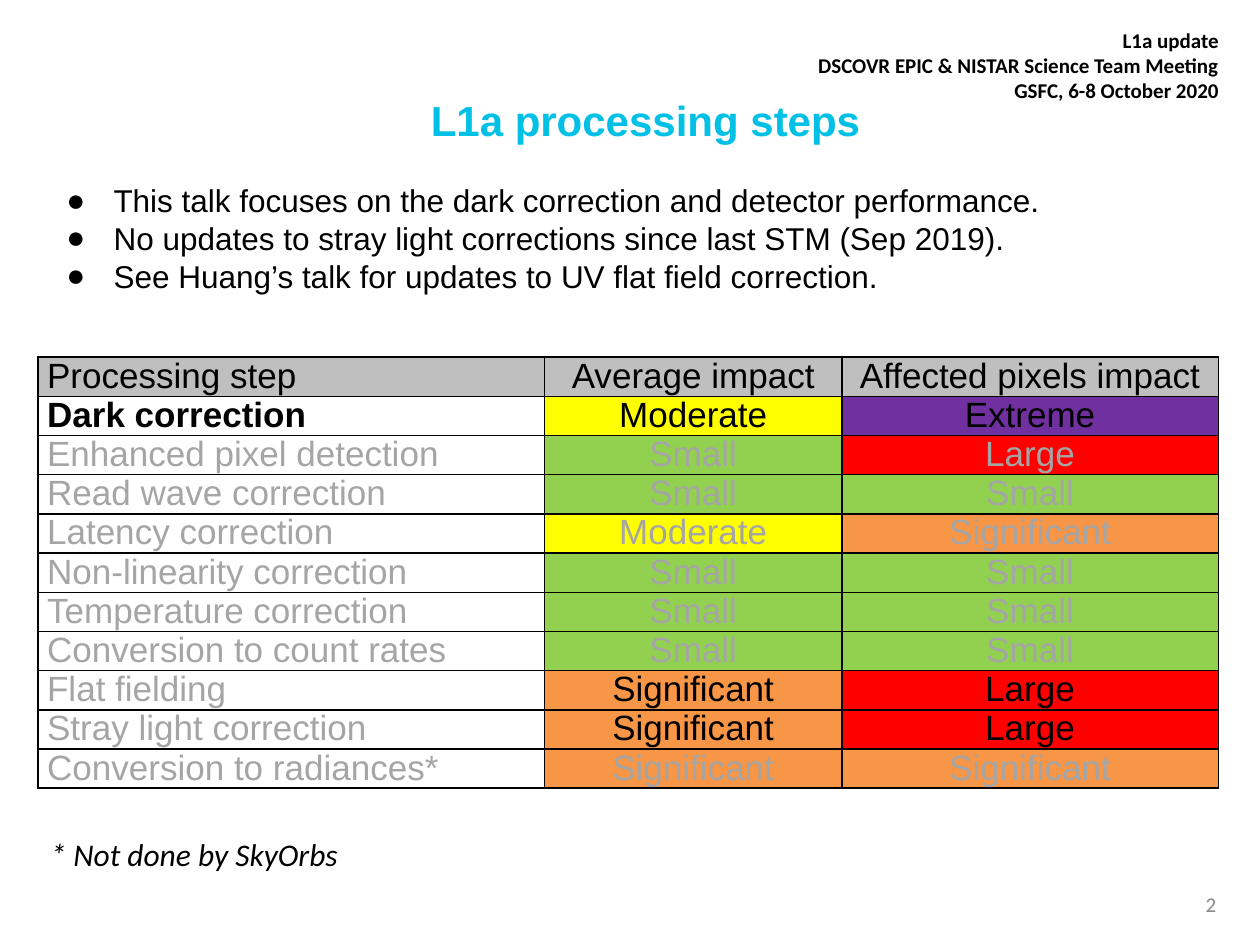
from lxml import etree
from pptx import Presentation
from pptx.dml.color import RGBColor
from pptx.enum import text as t
from pptx.oxml import ns
from pptx.util import Cm, Pt

BLACK = RGBColor(0x00, 0x00, 0x00)
CYAN = RGBColor(0x00, 0xC0, 0xE6)
DIM = RGBColor(0xA5, 0xA5, 0xA5)
GRAY = RGBColor(0x88, 0x88, 0x88)
SILVER = RGBColor(0xBF, 0xBF, 0xBF)
IMPACT = {
    "Small": RGBColor(0x92, 0xD0, 0x50),
    "Moderate": RGBColor(0xFF, 0xFF, 0x00),
    "Significant": RGBColor(0xF7, 0x96, 0x46),
    "Large": RGBColor(0xFF, 0x00, 0x00),
    "Extreme": RGBColor(0x70, 0x30, 0xA0),
}
LEFT, MID, RIGHT = t.PP_ALIGN.LEFT, t.PP_ALIGN.CENTER, t.PP_ALIGN.RIGHT


def style(para, size, color, name="Arial", bold=False, italic=False, align=LEFT):
    para.alignment = align
    font = para.font
    font.size, font.name, font.bold, font.italic = Pt(size), name, bold, italic
    font.color.rgb = color


def add_box(x, y, w, h, lines):
    frame = slide.shapes.add_textbox(Cm(x), Cm(y), Cm(w), Cm(h)).text_frame
    frame.word_wrap = True
    frame.text = "\n".join(lines)
    return frame


deck = Presentation()
deck.slide_width, deck.slide_height = Cm(25.4), Cm(19.05)
slide = deck.slides.add_slide(deck.slide_layouts[5])

# Header and page number
head = add_box(14.91, 0.43, 9.91, 1.8, [
    "L1a update",
    "DSCOVR EPIC & NISTAR Science Team Meeting",
    "GSFC, 6-8 October 2020",
])
for para in head.paragraphs:
    style(para, 12, BLACK, "Calibri", bold=True, align=RIGHT)

page = add_box(23.7, 17.72, 1.07, 1.02, ["2"])
page.vertical_anchor = t.MSO_ANCHOR.MIDDLE
style(page.paragraphs[0], 12, GRAY, "Calibri", align=RIGHT)

# Title
title = slide.shapes.title
title.left, title.top, title.width, title.height = Cm(8.43), Cm(1.78), Cm(9.6), Cm(1.27)
title.text_frame.text = "L1a processing steps"
title.text_frame.vertical_anchor = t.MSO_ANCHOR.TOP
style(title.text_frame.paragraphs[0], 24, CYAN, bold=True)

# Bullets
notes = add_box(0.77, 3.53, 24, 3.33, [
    "This talk focuses on the dark correction and detector performance.",
    "No updates to stray light corrections since last STM (Sep 2019).",
    "See Huang’s talk for updates to UV flat field correction.",
])
for para in notes.paragraphs:
    props = para._p.get_or_add_pPr()
    props.set("marL", str(Cm(1.27)))
    props.set("indent", str(-Cm(0.95)))
    etree.SubElement(props, ns.qn("a:buFont"), typeface="Arial")
    etree.SubElement(props, ns.qn("a:buChar"), char="●")
    style(para, 18, BLACK)

# Table of steps: label, average impact, affected pixels impact
rows = [
    ("Processing step", "Average impact", "Affected pixels impact"),
    ("Dark correction", "Moderate", "Extreme"),
    ("Enhanced pixel detection", "Small", "Large"),
    ("Read wave correction", "Small", "Small"),
    ("Latency correction", "Moderate", "Significant"),
    ("Non-linearity correction", "Small", "Small"),
    ("Temperature correction", "Small", "Small"),
    ("Conversion to count rates", "Small", "Small"),
    ("Flat fielding", "Significant", "Large"),
    ("Stray light correction", "Significant", "Large"),
    ("Conversion to radiances*", "Significant", "Significant"),
]
DARK = "Dark correction"
TALKS = ("Flat fielding", "Stray light correction")  # impacts stay black
widths = [10.21, 5.99, 7.59]
high = 0.79

grid = slide.shapes.add_table(
    len(rows), 3, Cm(0.77), Cm(7.2), Cm(sum(widths)), Cm(high * len(rows))).table
grid.first_row = grid.horz_banding = False
for col, width in zip(grid.columns, widths):
    col.width = Cm(width)
for r, row in enumerate(rows):
    grid.rows[r].height = Cm(high)
    for c, word in enumerate(row):
        cell = grid.cell(r, c)
        cell.text = word
        cell.vertical_anchor = t.MSO_ANCHOR.MIDDLE
        cell.margin_left = cell.margin_right = Cm(0.18)
        cell.margin_top = cell.margin_bottom = 0

        lit = r == 0 or row[0] == DARK or (c > 0 and row[0] in TALKS)
        para = cell.text_frame.paragraphs[0]
        para.line_spacing = Pt(21.5)
        style(para, 20, BLACK if lit else DIM, bold=word == DARK,
              align=MID if c else t.PP_ALIGN.JUSTIFY)

        props = cell._tc.get_or_add_tcPr()
        for side in ("lnL", "lnR", "lnT", "lnB"):
            line = etree.SubElement(props, ns.qn("a:" + side), w=str(Pt(1)))
            paint = etree.SubElement(line, ns.qn("a:solidFill"))
            etree.SubElement(paint, ns.qn("a:srgbClr"), val=str(BLACK))
        if r and not c:
            cell.fill.background()
        else:
            cell.fill.solid()
            cell.fill.fore_color.rgb = IMPACT[word] if r else SILVER

# Footnote
foot = add_box(0.77, 16.7, 6.93, 1.02, ["* Not done by SkyOrbs"])
style(foot.paragraphs[0], 18, BLACK, "Calibri", italic=True)

deck.save("out.pptx")
